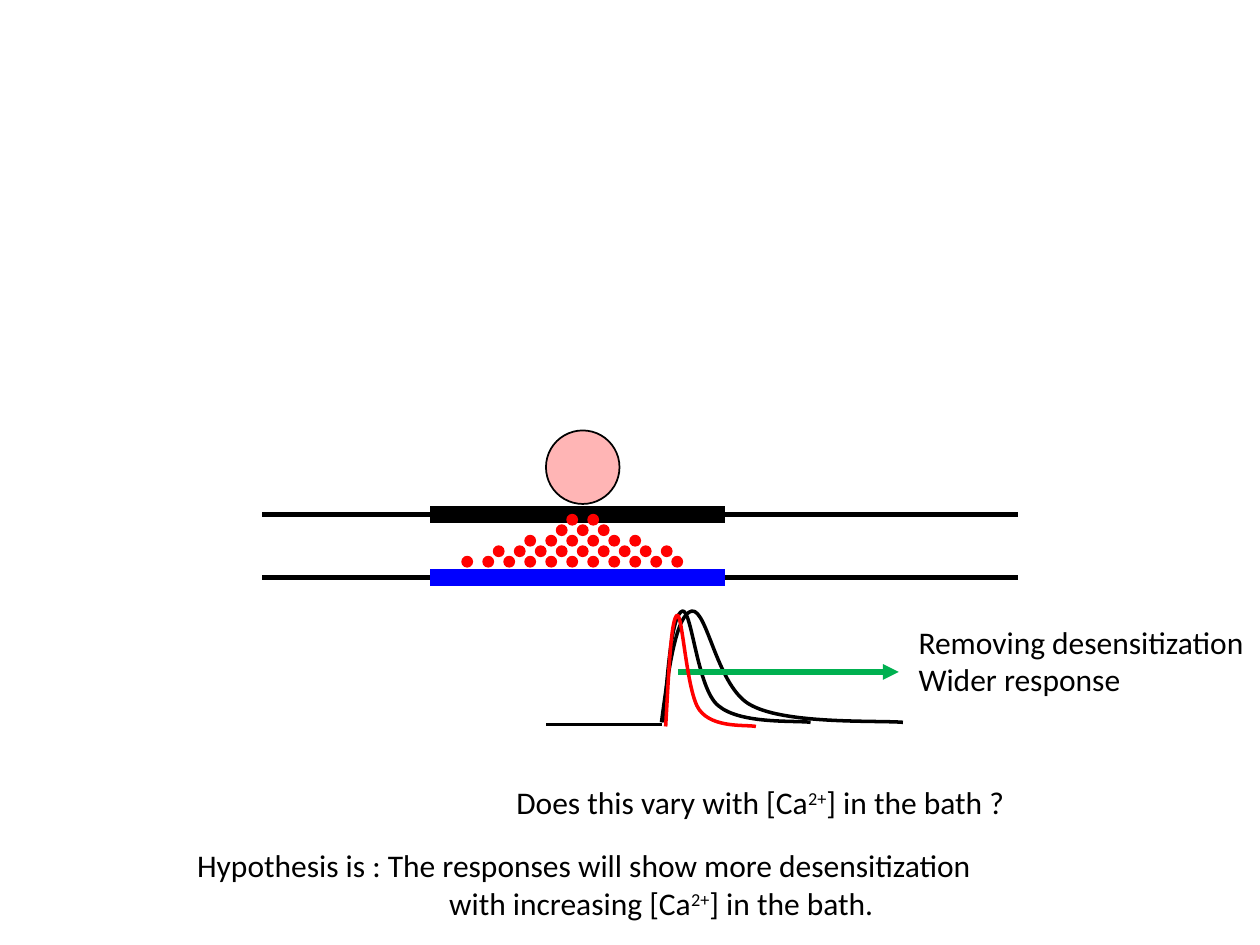
from dataclasses import dataclass

from pptx import Presentation
from pptx import util as u
from pptx.dml.color import RGBColor
from pptx.enum import shapes, text
from pptx.oxml.ns import qn

PX = u.Inches(1) // 120


@dataclass(frozen=True)
class Theme:
    ink: str = "000000"
    red: str = "FF0000"
    blue: str = "0000FF"
    green: str = "00B050"
    font: str = "Calibri"
    body: int = 18


def px(*values):
    return [v * PX for v in values]


def add_run(p, content, *, font, size, color, superscript=False):
    r = p.add_run()
    r.text = content
    r.font.name = font
    r.font.size = u.Pt(size)
    r.font.color.rgb = RGBColor.from_string(color)
    if superscript:
        r.font._element.set("baseline", "30000")


class Sketch:
    def __init__(self, slide, theme):
        self.s = slide
        self.theme = theme

    def stroke(self, sp, color, width):
        sp.line.color.rgb = RGBColor.from_string(color)
        sp.line.width = u.Pt(width)

    def line(self, x1, y1, x2, y2, color, width, arrow=False):
        sp = self.s.shapes.add_connector(
            shapes.MSO_CONNECTOR.STRAIGHT, *px(x1, y1, x2, y2))
        self.stroke(sp, color, width)
        props = sp._element.spPr
        if arrow:
            head = sp.line._get_or_add_ln().makeelement(
                qn("a:tailEnd"), {"type": "triangle"})
            sp.line._get_or_add_ln().append(head)
        props.append(props.makeelement(qn("a:effectLst"), {}))

    def circle(self, x, y, size, fill, line, width, opacity=None):
        sp = self.s.shapes.add_shape(
            shapes.MSO_SHAPE.OVAL, *px(x, y, size, size))
        sp.shadow.inherit = False
        sp.fill.solid()
        sp.fill.fore_color.rgb = RGBColor.from_string(fill)
        if opacity:
            color = sp._element.spPr.find(qn("a:solidFill"))[0]
            color.append(color.makeelement(
                qn("a:alpha"), {"val": str(opacity * 1000)}))
        self.stroke(sp, line, width)

    def curve(self, points, color, width):
        builder = self.s.shapes.build_freeform(*points[0], scale=PX)
        builder.add_line_segments(points[1:], close=False)
        sp = builder.convert_to_shape()
        sp.shadow.inherit = False
        sp.fill.background()
        self.stroke(sp, color, width)
        path = next(sp._element.iter(qn("a:path")))
        segments = path.findall(qn("a:lnTo"))
        for i in range(0, len(segments), 3):
            bezier = path.makeelement(qn("a:cubicBezTo"), {})
            path.append(bezier)
            for segment in segments[i:i + 3]:
                bezier.append(segment[0])
                path.remove(segment)

    def label(self, x, y, w, h, lines, last_indent=0):
        tf = self.s.shapes.add_textbox(*px(x, y, w, h)).text_frame
        tf.word_wrap = False
        tf.auto_size = text.MSO_AUTO_SIZE.SHAPE_TO_FIT_TEXT
        for i, line in enumerate(lines):
            p = tf.add_paragraph() if i else tf.paragraphs[0]
            for j, part in enumerate(line.split("^")):
                add_run(p, part, font=self.theme.font, size=self.theme.body,
                        color=self.theme.ink, superscript=j % 2 == 1)
        if last_indent:
            p._p.get_or_add_pPr().set("marL", str(last_indent * PX))


def response(left, top, width):
    fractions = [0, 0.03, 0.06, 0.125, 0.19, 0.23, 0.375, 0.52, 0.895, 1]
    heights = [108, 56, 5, 2, 0, 76, 92, 110, 106, 108]
    return [(round(left + f * width), top + h)
            for f, h in zip(fractions, heights)]


def main():
    prs = Presentation()
    prs.slide_width, prs.slide_height = px(1200, 900)
    t = Theme()
    sketch = Sketch(prs.slides.add_slide(prs.slide_layouts[6]), t)

    presynaptic, postsynaptic = 490, 550
    for y in (presynaptic, postsynaptic):
        sketch.line(250, y, 970, y, t.ink, 3)
    sketch.line(410, postsynaptic, 690, postsynaptic, t.blue, 10)
    sketch.line(410, presynaptic, 690, presynaptic, t.ink, 10)

    sketch.circle(520, 410, 70, t.red, t.ink, 1, opacity=29)
    transmitter_rows = [(540, 2), (530, 3), (500, 6), (470, 9), (440, 11)]
    for row, (start, count) in enumerate(transmitter_rows):
        for column in range(count):
            sketch.circle(start + 20 * column, presynaptic + 10 * row, 10,
                          t.red, t.red, 0.75)

    sketch.curve(response(632, 580, 140), t.ink, 2)
    sketch.line(630, 690, 520, 690, t.ink, 2)
    sketch.curve(response(630, 580, 230), t.ink, 2)
    sketch.line(646, 640, 856, 640, t.green, 3, arrow=True)

    sketch.label(863, 587, 337, 85,
                 ["Removing desensitization", "Wider response"])
    sketch.label(480, 740, 504, 48,
                 ["Does this vary with [Ca^2+^] in the bath ?"])
    sketch.label(176, 800, 778, 85,
                 ["Hypothesis is : The responses will show more desensitization",
                  "with increasing [Ca^2+^] in the bath."], last_indent=240)
    sketch.curve(response(634, 584, 86), t.red, 2)

    prs.save("out.pptx")


if __name__ == "__main__":
    main()
